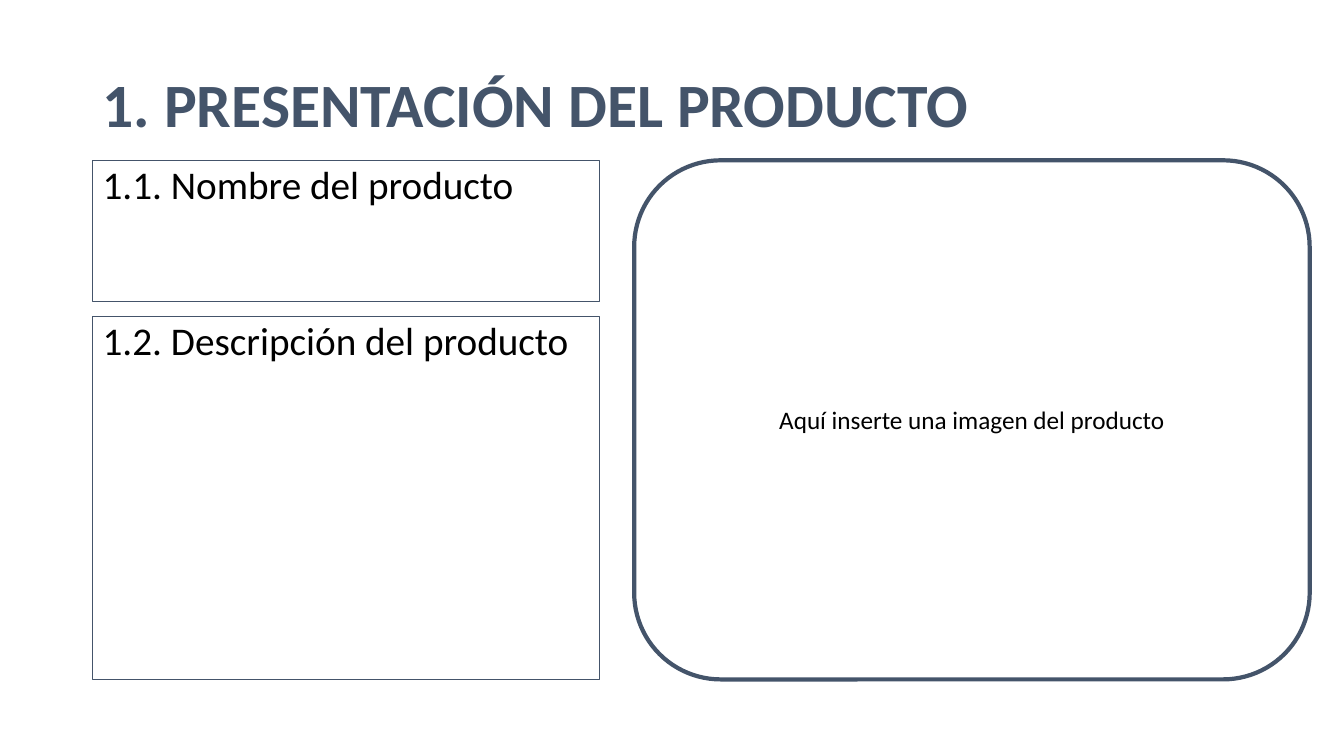
from pptx import Presentation
from pptx import util as u
from pptx.dml.color import RGBColor
from pptx.enum import shapes, text

SLATE = RGBColor(0x44, 0x54, 0x6A)
BLACK = RGBColor(0, 0, 0)
FONT = "Calibri"
TITLE = "1. PRESENTACIÓN DEL PRODUCTO"
FIELDS = [("1.1. Nombre del producto", 1.4), ("1.2. Descripción del producto", 3.6)]
PHOTO = "Aquí inserte una imagen del producto"
LEFT, TOP, WIDE, GAP = 0.92, 1.59, 5.03, 0.15
RECT = shapes.MSO_SHAPE.RECTANGLE
ROUND = shapes.MSO_SHAPE.ROUNDED_RECTANGLE
START, MID = text.PP_ALIGN.LEFT, text.PP_ALIGN.CENTER
HIGH, CORE = text.MSO_ANCHOR.TOP, text.MSO_ANCHOR.MIDDLE


def write(shape, words, size, color, anchor, align, bold=False):
    frame = shape.text_frame
    frame.word_wrap = True
    frame.vertical_anchor = anchor
    para = frame.paragraphs[0]
    para.alignment = align
    run = para.add_run()
    run.text = words
    font = run.font
    font.name, font.size, font.bold = FONT, u.Pt(size), bold
    font.color.rgb = color
    return para


def frame_box(slide, kind, box, weight):
    shape = slide.shapes.add_shape(kind, *map(u.Inches, box))
    shape.shadow.inherit = False
    shape.fill.background()
    shape.line.color.rgb = SLATE
    shape.line.width = u.Pt(weight)
    return shape


def main():
    deck = Presentation()
    deck.slide_width, deck.slide_height = u.Inches(13.33), u.Inches(7.5)
    slide = deck.slides.add_slide(deck.slide_layouts[6])

    title = slide.shapes.add_textbox(*map(u.Inches, (LEFT, 0.34, 11.5, 1.45)))
    para = write(title, TITLE, 44, SLATE, CORE, START, True)
    para.line_spacing = 0.9

    top = TOP
    for words, high in FIELDS:
        field = frame_box(slide, RECT, (LEFT, top, WIDE, high), 0.75)
        para = write(field, words, 28, BLACK, HIGH, START)
        para.line_spacing = 0.9
        para.space_before = u.Pt(10)
        top += high + GAP

    photo = frame_box(slide, ROUND, (6.29, TOP, 6.7, top - GAP - TOP), 3)
    write(photo, PHOTO, 18, BLACK, CORE, MID)
    deck.save("out.pptx")


if __name__ == "__main__":
    main()
